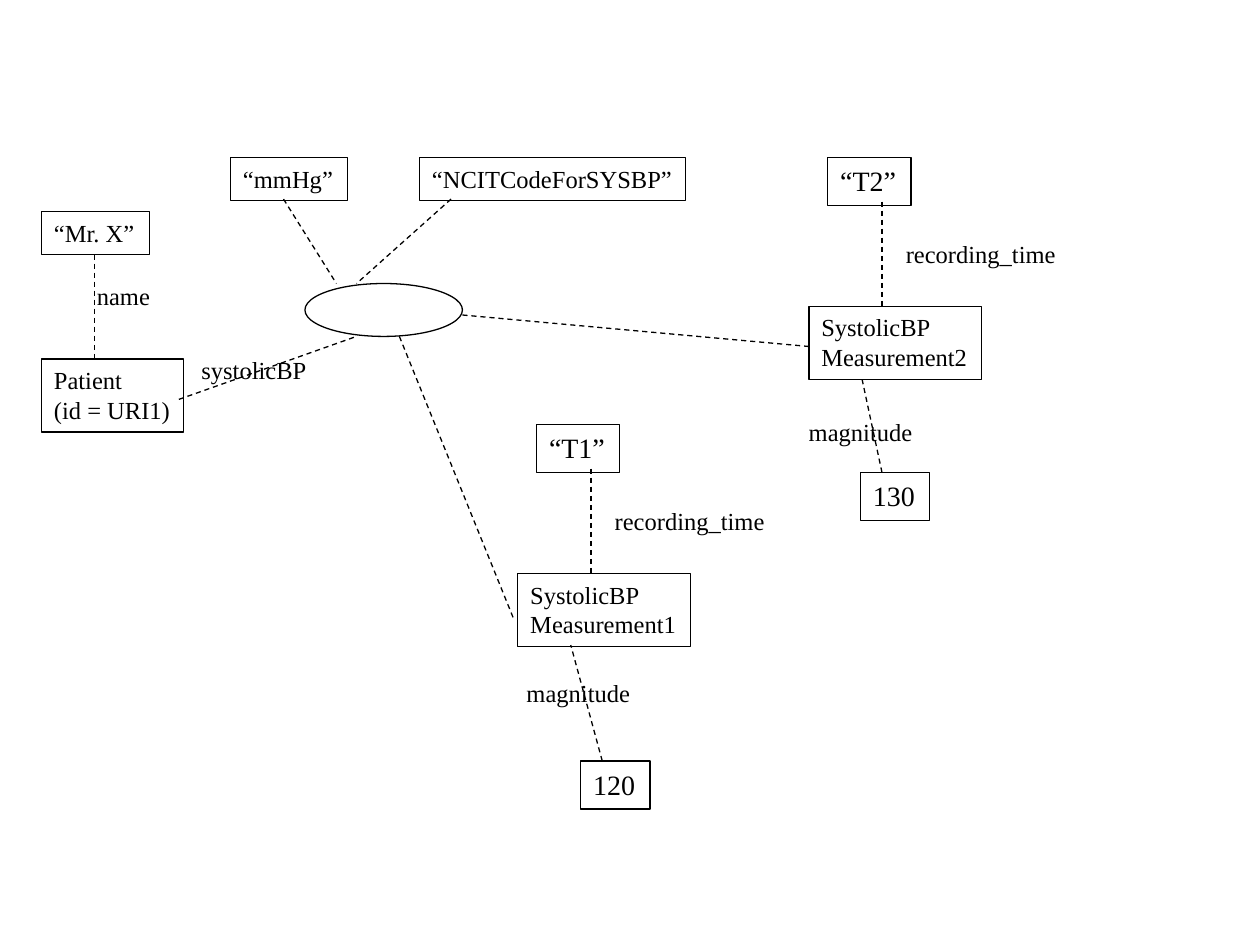
from pptx import Presentation
from pptx.dml.color import RGBColor as RGB
from pptx.enum.dml import MSO_LINE as Dash
from pptx.enum.shapes import MSO_CONNECTOR as Link, MSO_SHAPE as Kind
from pptx.enum.text import MSO_ANCHOR as Anchor, MSO_AUTO_SIZE as Fit, PP_ALIGN as Align
from pptx.oxml.ns import qn
from pptx.util import Inches, Pt
from lxml.etree import SubElement

INK = {"line": "000000", "text": "000000"}
FONT = "Times New Roman"


def stroke(line):
    line.color.rgb = RGB.from_string(INK["line"])
    line.width = Pt(0.75)


def write(shape, text, size):
    frame = shape.text_frame
    frame.text = text
    frame.word_wrap = False
    frame.auto_size = Fit.SHAPE_TO_FIT_TEXT
    frame.vertical_anchor = Anchor.TOP
    for para in frame.paragraphs:
        para.alignment = Align.LEFT
        para.font.name = FONT
        para.font.size = Pt(size)
        para.font.color.rgb = RGB.from_string(INK["text"])


def outline(slide, kind, x, y, w, h):
    shape = slide.shapes.add_shape(kind, *map(Inches, (x, y, w, h)))
    shape.shadow.inherit = False
    shape.fill.background()
    stroke(shape.line)
    return shape


def box(slide, text, x, y, w, h, size=14):
    write(outline(slide, Kind.RECTANGLE, x, y, w, h), text, size)


def label(slide, text, x, y, w):
    write(slide.shapes.add_textbox(*map(Inches, (x, y, w, 0.33))), text, 14)


def dash(slide, *ends):
    link = slide.shapes.add_connector(Link.STRAIGHT, *map(Inches, ends))
    stroke(link.line)
    link.line.dash_style = Dash.DASH
    SubElement(link._element.spPr, qn("a:effectLst"))


def reading(slide, num, x, y, value, spot, tag):
    """Draw one measurement with its time above and its magnitude below."""
    left, top = spot
    box(slide, f"SystolicBP\nMeasurement{num}", x, y, 1.37, 0.58)
    box(slide, f"“T{num}”", x + 0.15, y - 1.18, 0.66, 0.38, 16)
    dash(slide, x + 0.58, y - 0.83, x + 0.58, y)
    label(slide, "recording_time", x + 0.67, y - 0.58, 1.39)
    box(slide, value, left, top, 0.55, 0.38, 16)
    dash(slide, left + 0.17, top, x + 0.42, y + 0.57)
    label(slide, "magnitude", *tag, 1.02)


def patient(slide):
    box(slide, "Patient\n(id = URI1)", 0.33, 2.85, 1.13, 0.58)
    box(slide, "“Mr. X”", 0.33, 1.68, 0.86, 0.34)
    label(slide, "name", 0.67, 2.18, 0.62)
    dash(slide, 0.75, 2.02, 0.75, 2.85)
    dash(slide, 1.42, 3.17, 2.83, 2.67)
    label(slide, "systolicBP", 1.5, 2.77, 1.06)


def hub(slide):
    outline(slide, Kind.OVAL, 2.42, 2.25, 1.25, 0.42)
    box(slide, "“mmHg”", 1.83, 1.25, 0.93, 0.34)
    box(slide, "“NCITCodeForSYSBP”", 3.33, 1.25, 2.11, 0.34)
    dash(slide, 2.25, 1.58, 2.67, 2.25)
    dash(slide, 3.58, 1.58, 2.83, 2.25)
    dash(slide, 3.67, 2.5, 6.42, 2.75)
    dash(slide, 3.17, 2.67, 4.08, 4.92)


def main():
    deck = Presentation()
    deck.slide_width, deck.slide_height = Inches(10), Inches(7.5)
    slide = deck.slides.add_slide(deck.slide_layouts[6])
    patient(slide)
    reading(slide, 1, 4.11, 4.55, "120", (4.61, 6.04), (4.08, 5.33))
    reading(slide, 2, 6.42, 2.43, "130", (6.83, 3.75), (6.32, 3.26))
    hub(slide)
    deck.save("out.pptx")


if __name__ == "__main__":
    main()
